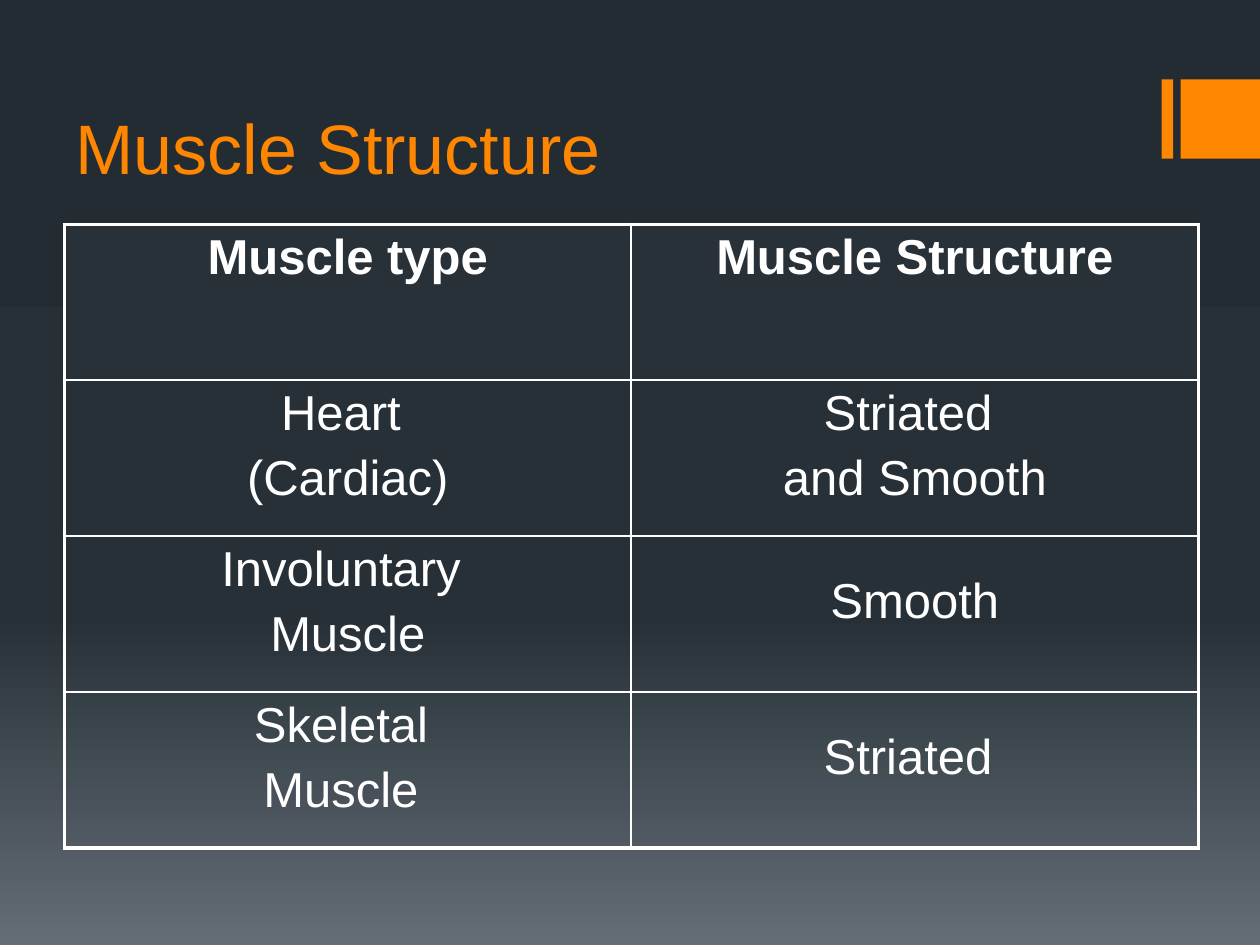
from lxml import etree
from pptx import Presentation
from pptx.dml.color import RGBColor
from pptx.enum import shapes, text
from pptx.oxml import ns
from pptx.util import Inches, Pt

ORANGE = RGBColor(0xFF, 0x86, 0x00)
WHITE = RGBColor(0xFF, 0xFF, 0xFF)
HEADER_FILL = RGBColor(0x28, 0x31, 0x38)
GRADIENT = [(0, RGBColor(0x24, 0x2C, 0x33)),
            (65, RGBColor(0x27, 0x30, 0x37)),
            (100, RGBColor(0x63, 0x6D, 0x76))]
TITLE_FONT = {"name": "Arial", "size": Pt(40), "bold": False}
CELL_FONT = {"name": "Arial", "size": Pt(28), "bold": False}
THICK, THIN = Pt(2.25), Pt(1)

# Trailing spaces offset the centred lines slightly
ROWS = [
    [["Muscle type"], ["Muscle Structure"]],
    [["Heart ", "(Cardiac)"], ["Striated ", "and Smooth"]],
    [["Involuntary ", "Muscle"], ["Smooth"]],
    [["Skeletal ", "Muscle "], ["Striated "]],
]


def set_font(font, values, color):
    for name, value in values.items():
        setattr(font, name, value)
    font.color.rgb = color


def add_color(parent, color):
    solid = etree.SubElement(parent, ns.qn("a:solidFill"))
    etree.SubElement(solid, ns.qn("a:srgbClr"), val=str(color))


def paint_background(page):
    fill = page.background.fill
    fill.gradient()
    fill.gradient_angle = 270  # counter-clockwise, so top to bottom
    stops = page.background._cSld.find(".//" + ns.qn("a:gsLst"))
    for stop in list(stops):
        stops.remove(stop)
    for percent, color in GRADIENT:
        stop = etree.SubElement(stops, ns.qn("a:gs"), pos=str(percent * 1000))
        etree.SubElement(stop, ns.qn("a:srgbClr"), val=str(color))


def add_corner_tab(page, left, top, width, height):
    """A narrow bar followed by a square that meets the slide edge."""
    bar, gap = Inches(0.09), Inches(0.06)
    square_left = left + bar + gap
    for x, w in ((left, bar), (square_left, left + width - square_left)):
        block = page.shapes.add_shape(shapes.MSO_SHAPE.RECTANGLE, x, top, w, height)
        block.shadow.inherit = False
        block.fill.solid()
        block.fill.fore_color.rgb = ORANGE
        block.line.fill.background()


def add_title(page, left, top, width, height):
    title = page.shapes.title
    title.left, title.top, title.width, title.height = left, top, width, height
    frame = title.text_frame
    frame.text = "Muscle Structure"
    frame.vertical_anchor = text.MSO_ANCHOR.BOTTOM
    para = frame.paragraphs[0]
    para.alignment = text.PP_ALIGN.LEFT
    set_font(para.runs[0].font, TITLE_FONT, ORANGE)


def set_borders(cell, widths):
    props = cell._tc.get_or_add_tcPr()
    for index, (side, width) in enumerate(widths.items()):
        line = etree.Element(ns.qn("a:ln" + side), w=str(int(width)))
        add_color(line, WHITE)
        props.insert(index, line)


def fill_cell(cell, lines, is_header):
    if is_header:
        cell.fill.solid()
        cell.fill.fore_color.rgb = HEADER_FILL
    else:
        cell.fill.background()
    # A single answer sits lower, level with the two-line label beside it
    lowered = len(lines) == 1 and not is_header
    cell.margin_top = Inches(0.3 if lowered else 0.05)
    frame = cell.text_frame
    for index, line in enumerate(lines):
        para = frame.add_paragraph() if index else frame.paragraphs[0]
        para.alignment = text.PP_ALIGN.CENTER
        if index:
            para.space_before = Pt(5.6)
        span = para.add_run()
        span.text = line
        set_font(span.font, {**CELL_FONT, "bold": is_header}, WHITE)


def add_muscle_table(page, left, top, width, height):
    last_row, last_col = len(ROWS) - 1, len(ROWS[0]) - 1
    table = page.shapes.add_table(last_row + 1, last_col + 1,
                                  left, top, width, height).table
    table.first_row = table.horz_banding = False
    for r, row in enumerate(ROWS):
        for c, lines in enumerate(row):
            cell = table.cell(r, c)
            fill_cell(cell, lines, is_header=r == 0)
            set_borders(cell, {
                "L": THICK if c == 0 else THIN,
                "R": THICK if c == last_col else THIN,
                "T": THICK if r == 0 else THIN,
                "B": THICK if r == last_row else THIN,
            })


def main():
    deck = Presentation()
    deck.slide_width, deck.slide_height = Inches(10), Inches(7.5)
    page = deck.slides.add_slide(deck.slide_layouts.get_by_name("Title Only"))
    paint_background(page)
    add_corner_tab(page, Inches(9.22), Inches(0.63), Inches(0.78), Inches(0.63))
    add_title(page, Inches(0.5), Inches(0.3), Inches(9), Inches(1.25))
    add_muscle_table(page, Inches(0.51), Inches(1.78), Inches(9), Inches(4.95))
    deck.save("out.pptx")


if __name__ == "__main__":
    main()
